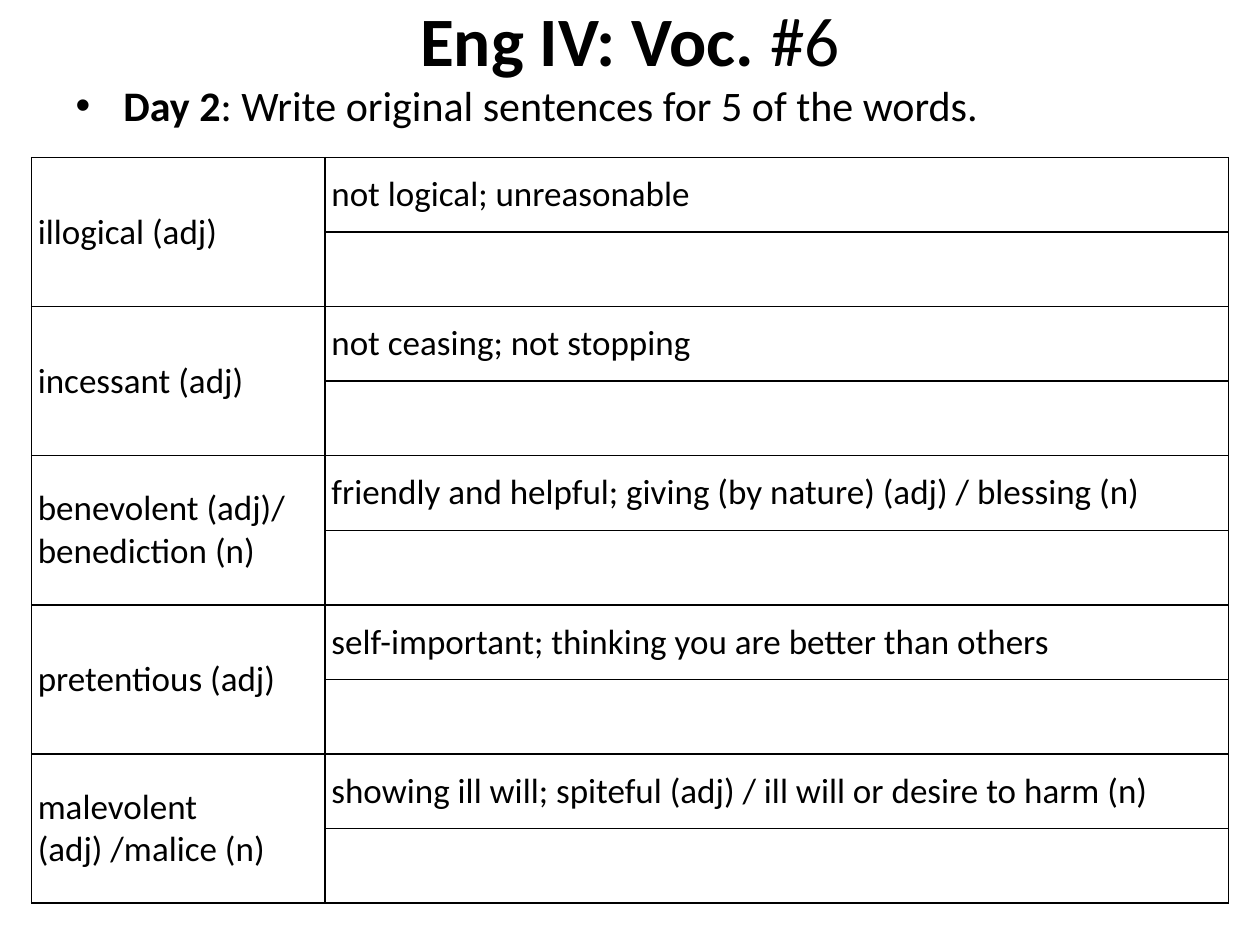
from typing import NamedTuple

from pptx import Presentation
from pptx.dml.color import RGBColor
from pptx.enum.text import MSO_ANCHOR as Anchor, MSO_AUTO_SIZE as AutoSize, PP_ALIGN as Align
from pptx.oxml.ns import qn
from pptx.util import Inches, Pt
from lxml.etree import SubElement

COLORS = {"ink": "000000", "paper": "FFFFFF"}
FONT = "Calibri"


class Word(NamedTuple):
    term: tuple[str, ...]  # one entry per paragraph
    meaning: str


WORDS = [
    Word(("illogical (adj)",), "not logical; unreasonable"),
    Word(("incessant (adj)",), "not ceasing; not stopping"),
    Word(("benevolent (adj)/", "benediction (n)"),
         "friendly and helpful; giving (by nature) (adj) / blessing (n)"),
    Word(("pretentious (adj)",), "self-important; thinking you are better than others"),
    Word(("malevolent (adj) /malice (n)",),
         "showing ill will; spiteful (adj) / ill will or desire to harm (n)"),
]


def add_run(p, text: str, size: float, bold: bool = False) -> None:
    r = p.add_run()
    r.text = text
    r.font.name = FONT
    r.font.size = Pt(size)
    r.font.bold = bold
    r.font.color.rgb = RGBColor.from_string(COLORS["ink"])


def place(sp, left: float, top: float, width: float, height: float):
    """Move a placeholder and return its text frame."""
    sp.left, sp.top = Inches(left), Inches(top)
    sp.width, sp.height = Inches(width), Inches(height)
    tf = sp.text_frame
    tf.word_wrap = True
    tf.auto_size = AutoSize.NONE
    return tf


def format_cell(cell) -> None:
    """Give a cell thin borders, no fill and narrow margins."""
    cell.vertical_anchor = Anchor.MIDDLE
    cell.margin_left = cell.margin_right = Inches(0.05)
    cell.margin_top = cell.margin_bottom = 0
    tcPr = cell._tc.get_or_add_tcPr()
    for side in ("a:lnL", "a:lnR", "a:lnT", "a:lnB"):
        ln = SubElement(tcPr, qn(side), w=str(Pt(1)))
        fill = SubElement(ln, qn("a:solidFill"))
        SubElement(fill, qn("a:srgbClr"), val=COLORS["ink"])
    cell.fill.background()


def write_cell(cell, lines: tuple[str, ...]) -> None:
    tf = cell.text_frame
    for i, line in enumerate(lines):
        p = tf.add_paragraph() if i else tf.paragraphs[0]
        add_run(p, line, 20)


def add_word_table(s, words: list[Word]) -> None:
    rows = 2 * len(words)
    frame = s.shapes.add_table(rows, 2, Inches(0.25), Inches(1.25), Inches(9.5), Inches(5.92))
    table = frame.table
    table.first_row = table.horz_banding = False
    for column, width in zip(table.columns, (2.33, 7.17)):
        column.width = Inches(width)
    for row in table.rows:
        row.height = Inches(5.92 / rows)
        for cell in row.cells:
            format_cell(cell)
    # Each word spans two rows: its meaning, then space for a sentence
    for i, word in enumerate(words):
        top = 2 * i
        table.cell(top, 0).merge(table.cell(top + 1, 0))
        write_cell(table.cell(top, 0), word.term)
        write_cell(table.cell(top, 1), (word.meaning,))


def main() -> None:
    prs = Presentation()
    prs.slide_width, prs.slide_height = Inches(10), Inches(7.5)
    s = prs.slides.add_slide(prs.slide_layouts[1])
    s.background.fill.solid()
    s.background.fill.fore_color.rgb = RGBColor.from_string(COLORS["paper"])

    # Title
    tf = place(s.shapes.title, 0.5, 0, 9, 0.62)
    tf.vertical_anchor = Anchor.MIDDLE
    p = tf.paragraphs[0]
    p.alignment = Align.CENTER
    add_run(p, "Eng IV: Voc. ", 39.6, bold=True)
    add_run(p, "#6", 39.6)

    # Task of the day
    p = place(s.placeholders[1], 0.5, 0.58, 9, 0.5).paragraphs[0]
    pPr = p._p.get_or_add_pPr()
    pPr.set("marL", str(Inches(0.38)))
    pPr.set("indent", str(-Inches(0.38)))
    SubElement(pPr, qn("a:buChar"), char="•")
    add_run(p, "Day 2", 24, bold=True)
    add_run(p, ": Write original sentences for 5 of the words.", 24)

    # Vocabulary
    add_word_table(s, WORDS)
    prs.save("out.pptx")


if __name__ == "__main__":
    main()
